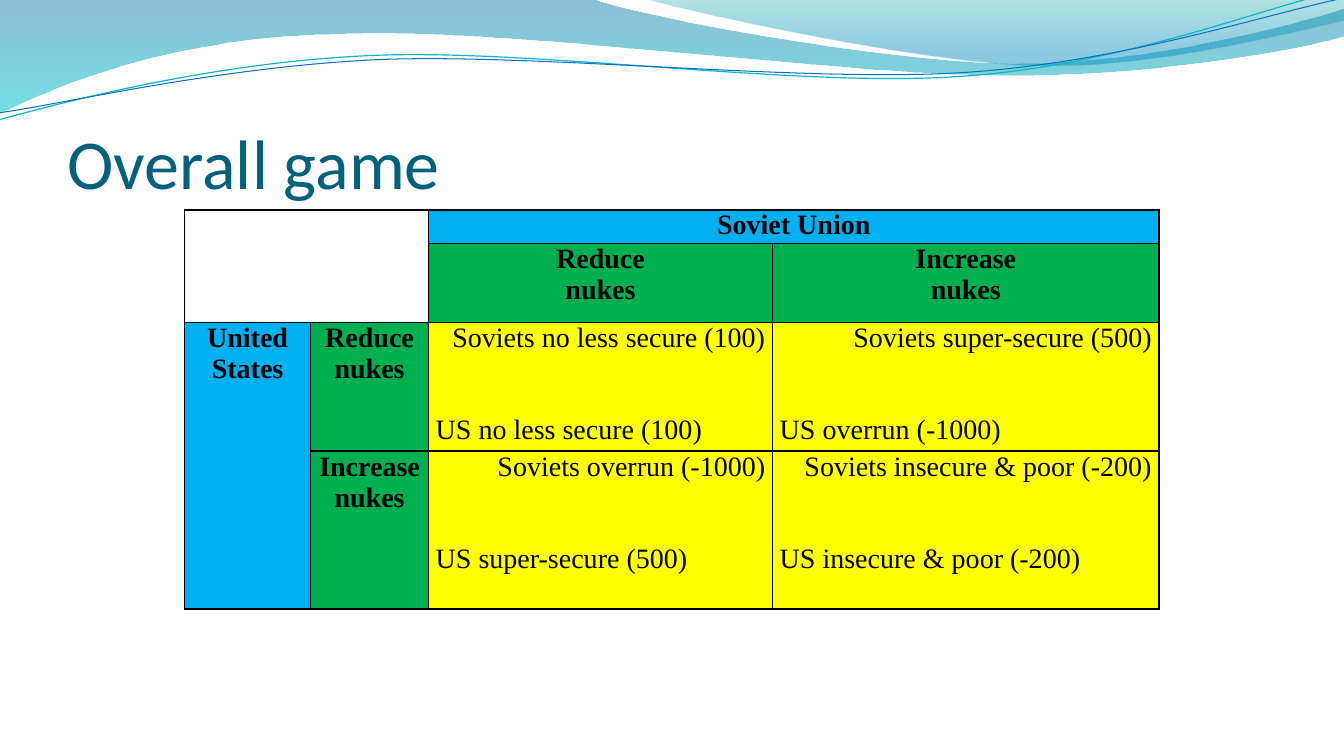
import lxml.etree
import pptx
import pptx.dml.color
import pptx.enum.text
import pptx.oxml.ns
import pptx.util

Cm = pptx.util.Cm
Pt = pptx.util.Pt
ALIGN = pptx.enum.text.PP_ALIGN
qn = pptx.oxml.ns.qn

BLUE, GREEN, YELLOW, BLACK = "00B0F0", "00B050", "FFFF00", "000000"
TWO_LINES = 44


def color(value):
    return pptx.dml.color.RGBColor.from_string(value)


class GameSlide:
    title_font = "Calibri"
    table_font = "Times New Roman"
    table_size = 20

    def __init__(self, deck):
        self.slide = deck.slides.add_slide(deck.slide_layouts[6])

    def outline(self, start, segments, close):
        builder = self.slide.shapes.build_freeform(Cm(start[0]), Cm(start[1]))
        builder.add_line_segments([(Cm(x), Cm(y)) for x, y in (s[-1] for s in segments)], close=close)
        shape = builder.convert_to_shape()
        shape.shadow.inherit = False
        sides = list(shape._element.spPr.iter(qn("a:lnTo")))
        for side, segment in zip(sides, segments):
            if len(segment) == 3:
                curve = lxml.etree.Element(qn("a:cubicBezTo"))
                for x, y in segment:
                    lxml.etree.SubElement(
                        curve, qn("a:pt"), x=str(Cm(x) - shape.left), y=str(Cm(y) - shape.top))
                side.getparent().replace(side, curve)
        return shape

    def wave(self, start, segments, stops):
        shape = self.outline(start, segments, True)
        shape.line.fill.background()
        shape.fill.gradient()
        shape.fill.gradient_angle = 270
        for stop, (position, value, opacity) in zip(shape.fill.gradient_stops, stops):
            stop.position = position
            stop.color.rgb = color(value)
        for tone, (position, value, opacity) in zip(shape._element.spPr.iter(qn("a:srgbClr")), stops):
            lxml.etree.SubElement(tone, qn("a:alpha"), val=str(opacity * 1000))

    def strand(self, start, segments, value, width):
        shape = self.outline(start, segments, False)
        shape.fill.background()
        shape.line.color.rgb = color(value)
        shape.line.width = Pt(width)

    def style(self, paragraph, font, size, value, bold, align):
        paragraph.alignment = align
        for run in paragraph.runs:
            run.font.name = font
            run.font.size = Pt(size)
            run.font.color.rgb = color(value)
            run.font.bold = bold

    def title(self, text, left, top, width, height):
        frame = self.slide.shapes.add_textbox(Cm(left), Cm(top), Cm(width), Cm(height)).text_frame
        frame.word_wrap = True
        frame.vertical_anchor = pptx.enum.text.MSO_ANCHOR.BOTTOM
        frame.margin_left = frame.margin_right = frame.margin_bottom = 0
        frame.text = text
        self.style(frame.paragraphs[0], self.title_font, 50, "04617B", False, ALIGN.LEFT)

    def table(self, left, top, widths, heights):
        frame = self.slide.shapes.add_table(
            len(heights), len(widths), Cm(left), Cm(top), Cm(sum(widths)), Cm(sum(heights)))
        table = frame.table
        table.first_row = table.horz_banding = False
        for column, width in zip(table.columns, widths):
            column.width = Cm(width)
        for row, height in zip(table.rows, heights):
            row.height = Cm(height)
            for cell in row.cells:
                cell.margin_left = cell.margin_right = cell.margin_top = cell.margin_bottom = 0
                self.borders(cell)
                cell.fill.background()
        return table

    def borders(self, cell):
        properties = cell._tc.get_or_add_tcPr()
        for side in ("a:lnL", "a:lnR", "a:lnT", "a:lnB"):
            edge = lxml.etree.SubElement(properties, qn(side), w=str(Pt(1)))
            fill = lxml.etree.SubElement(edge, qn("a:solidFill"))
            lxml.etree.SubElement(fill, qn("a:srgbClr"), val=BLACK)

    def cell(self, cell, text, fill, bold, aligns, margin):
        cell.fill.solid()
        cell.fill.fore_color.rgb = color(fill)
        cell.margin_left = cell.margin_right = Cm(margin)
        cell.text_frame.text = text
        for paragraph, align in zip(cell.text_frame.paragraphs, aligns):
            self.style(paragraph, self.table_font, self.table_size, BLACK, bold, align)

    def heading(self, cell, text, fill):
        self.cell(cell, text, fill, True, (ALIGN.CENTER, ALIGN.CENTER), 0.08)

    def payoff(self, cell, soviets, states):
        self.cell(cell, f"{soviets}\n{states}", YELLOW, False, (ALIGN.RIGHT, ALIGN.LEFT), 0.18)
        cell.text_frame.paragraphs[1].space_before = Pt(TWO_LINES)


def main():
    deck = pptx.Presentation()
    deck.slide_width, deck.slide_height = Cm(33.87), Cm(19.05)
    game = GameSlide(deck)

    game.wave((0, 0), [
        [(14.91, -0.03)],
        [(16.1, 0.43), (22.48, 1.6), (25.68, 1.6)],
        [(28.91, 1.6), (32.46, 0.66), (33.86, 0.23)],
        [(33.91, 0.91)],
        [(33.3, 1.12), (29.46, 1.93), (25.25, 1.9)],
        [(21.06, 1.9), (12.93, 0.71), (8.71, 0.86)],
        [(4.37, 0.91), (1.55, 2.11), (-0.03, 2.87)],
    ], [(0, "0074A1", 45), (1, "00C6CF", 55)])
    game.wave((16.23, -0.03), [
        [(17.25, 0.28), (23.09, 1.57), (26.04, 1.65)],
        [(28.98, 1.75), (32.56, 0.81), (33.86, 0.53)],
        [(33.86, 0)],
    ], [(0, "00A1A9", 30), (0.8, "008BBF", 45)])
    game.strand((-0.03, 3.02), [
        [(1.63, 2.57), (5.36, 1.57), (9.37, 1.4)],
        [(13.39, 1.22), (20.07, 2.21), (24.13, 1.93)],
        [(28.19, 1.68), (31.8, 0.2), (33.81, -0.25)],
    ], "0AB8BF", 0.85)
    game.strand((0, 2.84), [
        [(1.6, 2.62), (5.54, 1.68), (9.6, 1.5)],
        [(13.64, 1.35), (20.22, 2.08), (24.26, 1.83)],
        [(28.32, 1.57), (31.88, 0.36), (33.88, -0.05)],
    ], "0F6FC6", 0.75)

    game.title("Overall game", 1.7, 1.96, 30.48, 3.18)

    payoffs = game.table(4.65, 5.29, (3.18, 2.97, 8.67, 9.74), (0.83, 1.98, 3.15, 3.98))
    payoffs.cell(0, 0).merge(payoffs.cell(1, 1))
    payoffs.cell(0, 2).merge(payoffs.cell(0, 3))
    payoffs.cell(2, 0).merge(payoffs.cell(3, 0))
    game.heading(payoffs.cell(0, 2), "Soviet Union", BLUE)
    game.heading(payoffs.cell(2, 0), "United States", BLUE)
    payoffs.cell(2, 0).text_frame.paragraphs[0].space_before = Pt(TWO_LINES)
    for index, move in enumerate(("Reduce", "Increase"), start=2):
        game.heading(payoffs.cell(1, index), f"{move}\nnukes", GREEN)
        game.heading(payoffs.cell(index, 1), f"{move} nukes", GREEN)

    outcomes = (
        (("Soviets no less secure (100)", "US no less secure (100)"),
         ("Soviets super-secure (500)", "US overrun (-1000)")),
        (("Soviets overrun (-1000)", "US super-secure (500)"),
         ("Soviets insecure & poor (-200)", "US insecure & poor (-200)")),
    )
    for row, pairs in enumerate(outcomes, start=2):
        for column, (soviets, states) in enumerate(pairs, start=2):
            game.payoff(payoffs.cell(row, column), soviets, states)

    deck.save("out.pptx")


if __name__ == "__main__":
    main()
